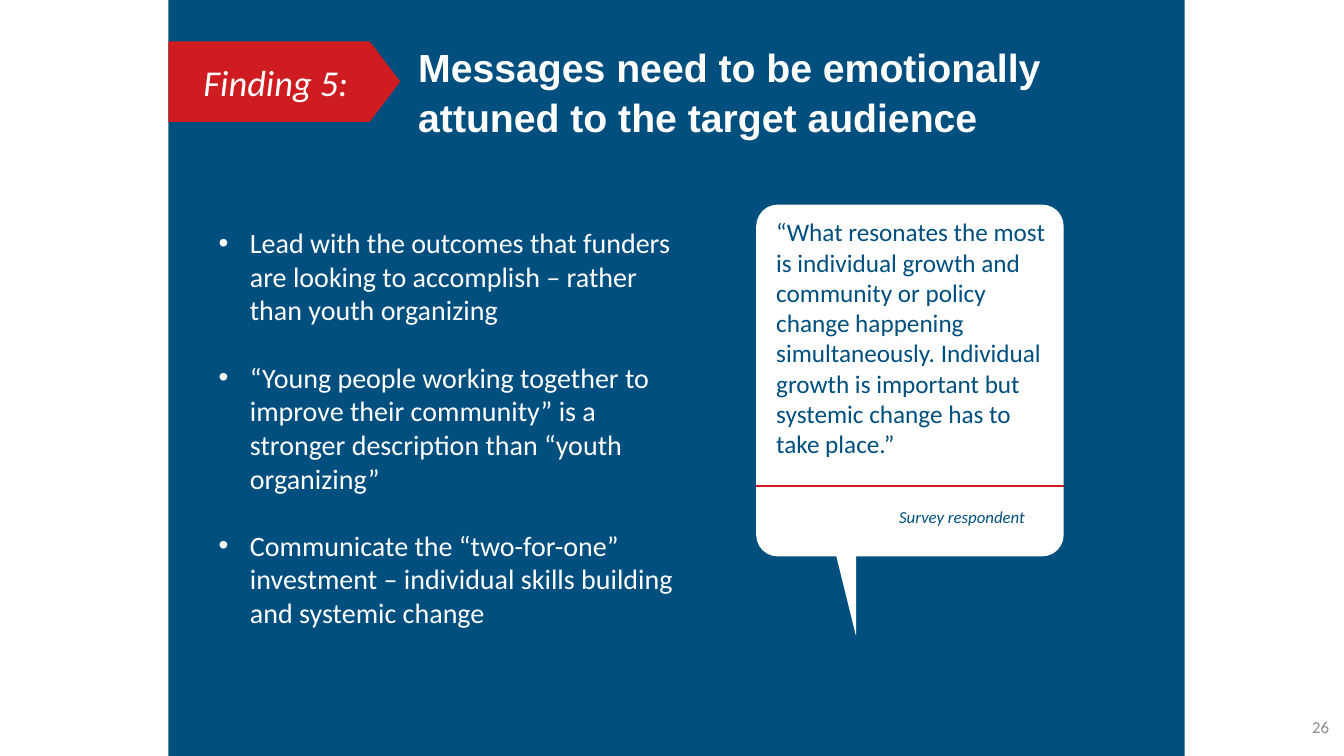
from dataclasses import dataclass

from lxml import etree
from pptx import Presentation
from pptx.dml.color import RGBColor
from pptx.enum import shapes, text
from pptx.oxml import ns
from pptx.util import Inches, Pt


@dataclass(frozen=True)
class Theme:
    navy: RGBColor = RGBColor(0x00, 0x4F, 0x7E)
    red: RGBColor = RGBColor(0xCF, 0x1C, 0x20)
    white: RGBColor = RGBColor(0xFF, 0xFF, 0xFF)
    gray: RGBColor = RGBColor(0x8C, 0x8C, 0x8C)
    head: str = "Arial"
    body: str = "Calibri"
    title: int = 28
    tag: int = 26
    point: int = 20
    quote: int = 18
    small: int = 12


THEME = Theme()
KIND = shapes.MSO_SHAPE
ALIGN = text.PP_ALIGN
MIDDLE = text.MSO_ANCHOR.MIDDLE
TOP = text.MSO_ANCHOR.TOP

POINTS = [
    "Lead with the outcomes that funders are looking to accomplish – rather than youth organizing",
    "“Young people working together to improve their community” is a stronger description "
    "than “youth organizing”",
    "Communicate the “two-for-one” investment – individual skills building and systemic change",
]
QUOTE = (
    "“What resonates the most is individual growth and community or policy change happening "
    "simultaneously. Individual growth is important but systemic change has to take place.”"
)


def add_block(slide, kind, box, color, adjust=None):
    block = slide.shapes.add_shape(kind, *map(Inches, box))
    block.shadow.inherit = False
    block.fill.solid()
    block.fill.fore_color.rgb = color
    block.line.fill.background()
    if adjust is not None:
        block.adjustments[0] = adjust
    return block


def write(shape, lines, size, color, face=THEME.body, bold=False, italic=False,
          align=ALIGN.LEFT, anchor=TOP):
    """Fill a shape with one paragraph per line, all in one style."""
    frame = shape.text_frame
    frame.word_wrap = True
    frame.vertical_anchor = anchor
    frame.text = "\n".join(lines)
    for para in frame.paragraphs:
        para.alignment = align
        font = para.font
        font.name, font.size = face, Pt(size)
        font.bold, font.italic = bold, italic
        font.color.rgb = color
    return frame.paragraphs


def add_text(slide, box, lines, size, color, **style):
    return write(slide.shapes.add_textbox(*map(Inches, box)), lines, size, color, **style)


def indent(para, left, first=0):
    props = para._p.get_or_add_pPr()
    props.set("marL", str(Inches(left)))
    props.set("indent", str(Inches(first)))
    return props


def add_bullets(slide, box, lines):
    paras = add_text(slide, box, lines, THEME.point, THEME.white)
    for rank, para in enumerate(paras):
        para.space_before = Pt(24 if rank else 0)
        props = indent(para, 0.31, -0.31)
        etree.SubElement(props, ns.qn("a:buFont")).set("typeface", "Arial")
        etree.SubElement(props, ns.qn("a:buChar")).set("char", "•")


def add_rule(slide, left, right, y):
    rule = slide.shapes.add_connector(
        shapes.MSO_CONNECTOR.STRAIGHT, Inches(left), Inches(y), Inches(right), Inches(y))
    rule.line.color.rgb = THEME.red
    rule.line.width = Pt(1)
    etree.SubElement(rule._element.spPr, ns.qn("a:effectLst"))


def add_tag(slide, label):
    tag = add_block(slide, KIND.PENTAGON, (1.67, 0.41, 2.3, 0.8), THEME.red, 0.38)
    paras = write(tag, [label], THEME.tag, THEME.white, italic=True, anchor=MIDDLE)
    indent(paras[0], 0.25)


def add_quote(slide, quote, source):
    """Draw the speech bubble with its quote, rule and source."""
    left, width = 7.5, 3.05
    add_block(slide, KIND.ROUNDED_RECTANGLE, (left, 2.03, width, 3.49), THEME.white, 0.07)
    tail = add_block(slide, KIND.RIGHT_TRIANGLE, (7.88, 3.84, 0.61, 2.47), THEME.white)
    tail.rotation = 180
    add_text(slide, (7.6, 2.1, 2.95, 2.52), [quote], THEME.quote, THEME.navy)
    add_rule(slide, left, left + width, 4.82)
    paras = add_text(slide, (7.82, 4.98, 2.73, 0.3), [source], THEME.small, THEME.navy,
                     italic=True)
    indent(paras[0], 1)


def main():
    deck = Presentation()
    deck.slide_width, deck.slide_height = Inches(13.33), Inches(7.5)
    slide = deck.slides.add_slide(deck.slide_layouts[6])
    add_block(slide, KIND.RECTANGLE, (1.67, 0, 10.08, 7.5), THEME.navy)
    add_text(slide, (12.48, 6.93, 0.8, 0.57), ["26"], THEME.small, THEME.gray,
             align=ALIGN.RIGHT, anchor=MIDDLE)
    title = add_text(slide, (4.05, 0.2, 7.26, 1.39),
                     ["Messages need to be emotionally attuned to the target audience"],
                     THEME.title, THEME.white, face=THEME.head, bold=True, anchor=MIDDLE)
    title[0].line_spacing = 1.07
    add_bullets(slide, (2.07, 2.19, 4.81, 4.41), POINTS)
    add_tag(slide, "Finding 5:")
    add_quote(slide, QUOTE, "Survey respondent")
    deck.save("out.pptx")


if __name__ == "__main__":
    main()
